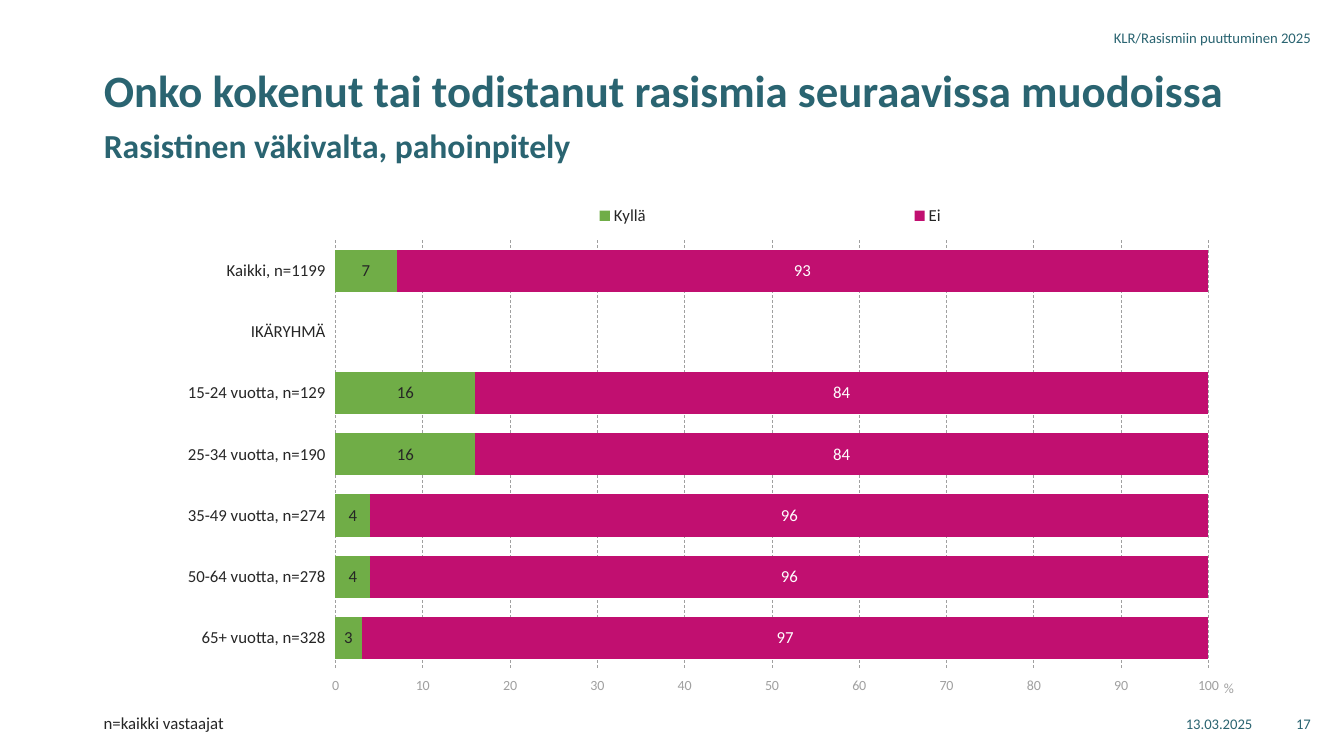
from lxml import etree
from pptx import Presentation
from pptx.chart.data import CategoryChartData
from pptx.dml.color import RGBColor
from pptx.enum.chart import (XL_CHART_TYPE as ChartType, XL_LABEL_POSITION as LabelPos,
                             XL_LEGEND_POSITION as LegendPos,
                             XL_TICK_LABEL_POSITION as TickPos, XL_TICK_MARK as Tick)
from pptx.enum.dml import MSO_LINE as Dash
from pptx.enum.text import MSO_ANCHOR as Anchor, MSO_AUTO_SIZE as AutoSize, PP_ALIGN as Align
from pptx.oxml.ns import qn
from pptx.util import Inches, Pt

FONT = "Calibri"
COLORS = {"teal": "2A6471", "dark": "262626", "grey": "A0A0A0", "white": "FFFFFF",
          "green": "70AD47", "magenta": "C10F70"}
CATEGORIES = ["Kaikki, n=1199", "IKÄRYHMÄ", "15-24 vuotta, n=129", "25-34 vuotta, n=190",
              "35-49 vuotta, n=274", "50-64 vuotta, n=278", "65+ vuotta, n=328"]
SERIES = [("Kyllä", [7, None, 16, 16, 4, 4, 3], "green", "dark"),
          ("Ei", [93, None, 84, 84, 96, 96, 97], "magenta", "white")]


def rgb(name):
    """Return the named palette colour."""
    return RGBColor.from_string(COLORS[name])


def set_font(font, size=12, color="dark", bold=False):
    """Format a font of text or of a chart part."""
    font.name, font.size, font.bold = FONT, Pt(size), bold
    font.color.rgb = rgb(color)


def add_text(p, text, **fmt):
    """Add a formatted run to a paragraph."""
    r = p.add_run()
    r.text = text
    set_font(r.font, **fmt)


def set_layout(parent, index, **values):
    """Place a chart part by fractions of the chart area."""
    layout = parent.find(qn("c:layout"))
    if layout is None:
        layout = etree.Element(qn("c:layout"))
        parent.insert(index, layout)
    manual = etree.SubElement(layout, qn("c:manualLayout"))
    for tag, value in values.items():
        etree.SubElement(manual, qn("c:" + tag)).set("val", str(value))


class SlideBuilder:
    """Hold the current slide and add its elements in one style."""

    def __init__(self, prs):
        """Start a slide that has only a title."""
        self.s = prs.slides.add_slide(prs.slide_layouts[5])

    def title(self, box, heading, subheading):
        """Fill the title placeholder with two lines."""
        sp = self.s.shapes.title
        sp.left, sp.top, sp.width, sp.height = map(Inches, box)
        tf = sp.text_frame
        tf.word_wrap, tf.auto_size, tf.vertical_anchor = True, AutoSize.NONE, Anchor.TOP
        p = tf.paragraphs[0]
        p.alignment, p.line_spacing = Align.LEFT, Pt(35)
        add_text(p, heading, size=32, color="teal", bold=True)
        p.add_line_break()
        add_text(p, subheading, size=24, color="teal", bold=True)

    def text(self, box, text, align=Align.RIGHT, anchor=Anchor.MIDDLE, spacing=1.0,
             size=10.5, color="teal"):
        """Add a one-line text box."""
        tf = self.s.shapes.add_textbox(*map(Inches, box)).text_frame
        tf.word_wrap, tf.vertical_anchor = True, anchor
        p = tf.paragraphs[0]
        p.alignment, p.line_spacing = align, spacing
        add_text(p, text, size=size, color=color)

    def chart(self, box):
        """Add the stacked bar chart."""
        data = CategoryChartData()
        data.categories = CATEGORIES
        for name, values, _, _ in SERIES:
            data.add_series(name, values)
        chart = self.s.shapes.add_chart(ChartType.BAR_STACKED, *map(Inches, box), data).chart
        set_font(chart.font)
        chart.has_title = False
        plot = chart.plots[0]
        plot.gap_width, plot.overlap, plot.vary_by_categories = 45, 100, False
        for series, (_, _, fill, label) in zip(plot.series, SERIES):
            self.series(series, fill, label)
        self.axes(chart.category_axis, chart.value_axis)
        chart.has_legend = True
        legend = chart.legend
        legend.position, legend.include_in_layout = LegendPos.TOP, False
        set_font(legend.font)
        set_layout(legend._element, 1, xMode="edge", yMode="edge",
                   x=0.21, y=0.04, w=0.75, h=0.08)
        set_layout(chart._chartSpace.chart.plotArea, 0, layoutTarget="inner", xMode="edge",
                   yMode="edge", x=0.209, y=0.126, w=0.755, h=0.808)

    def series(self, series, fill, label):
        """Colour a series and show its values."""
        series.format.fill.solid()
        series.format.fill.fore_color.rgb = rgb(fill)
        labels = series.data_labels
        labels.show_value, labels.position = True, LabelPos.CENTER
        labels.number_format, labels.number_format_is_linked = "#,##0", False
        set_font(labels.font, color=label)

    def axes(self, cat, val):
        """Format both axes, the gridlines and the unit."""
        for axis, size, color, place in ((cat, 12, "dark", TickPos.LOW),
                                         (val, 10, "grey", TickPos.HIGH)):
            axis.major_tick_mark = axis.minor_tick_mark = Tick.NONE
            axis.tick_label_position = place
            axis.format.line.fill.background()
            set_font(axis.tick_labels.font, size=size, color=color)
        cat.reverse_order = True
        val.minimum_scale, val.maximum_scale, val.major_unit = 0, 100.01, 10
        val.tick_labels.number_format = "General"
        val.tick_labels.number_format_is_linked = False
        val.has_major_gridlines = True
        line = val.major_gridlines.format.line
        line.color.rgb, line.width, line.dash_style = rgb("grey"), Pt(0.5), Dash.DASH
        add_text(val.axis_title.text_frame.paragraphs[0], "%", size=10, color="grey")
        set_layout(val.axis_title._element, 1, xMode="edge", yMode="edge", x=0.975, y=0.95)


def main():
    """Build and save the slide."""
    prs = Presentation()
    prs.slide_width, prs.slide_height = Inches(13.33), Inches(7.5)
    b = SlideBuilder(prs)
    b.title((0.93, 0.62, 11.47, 1.05), "Onko kokenut tai todistanut rasismia seuraavissa muodoissa",
            "Rasistinen väkivalta, pahoinpitely")
    b.chart((0.93, 1.72, 11.47, 5.26))
    b.text((9.52, 6.98, 3, 0.4), "13.03.2025")
    b.text((8.6, 0.17, 4.5, 0.4), "KLR/Rasismiin puuttuminen 2025")
    b.text((12.66, 6.98, 0.44, 0.4), "17")
    b.text((0.93, 7.04, 9.18, 0.28), "n=kaikki vastaajat", align=Align.LEFT, anchor=Anchor.TOP,
           spacing=0.9, size=12, color="dark")
    prs.save("out.pptx")


if __name__ == "__main__":
    main()
